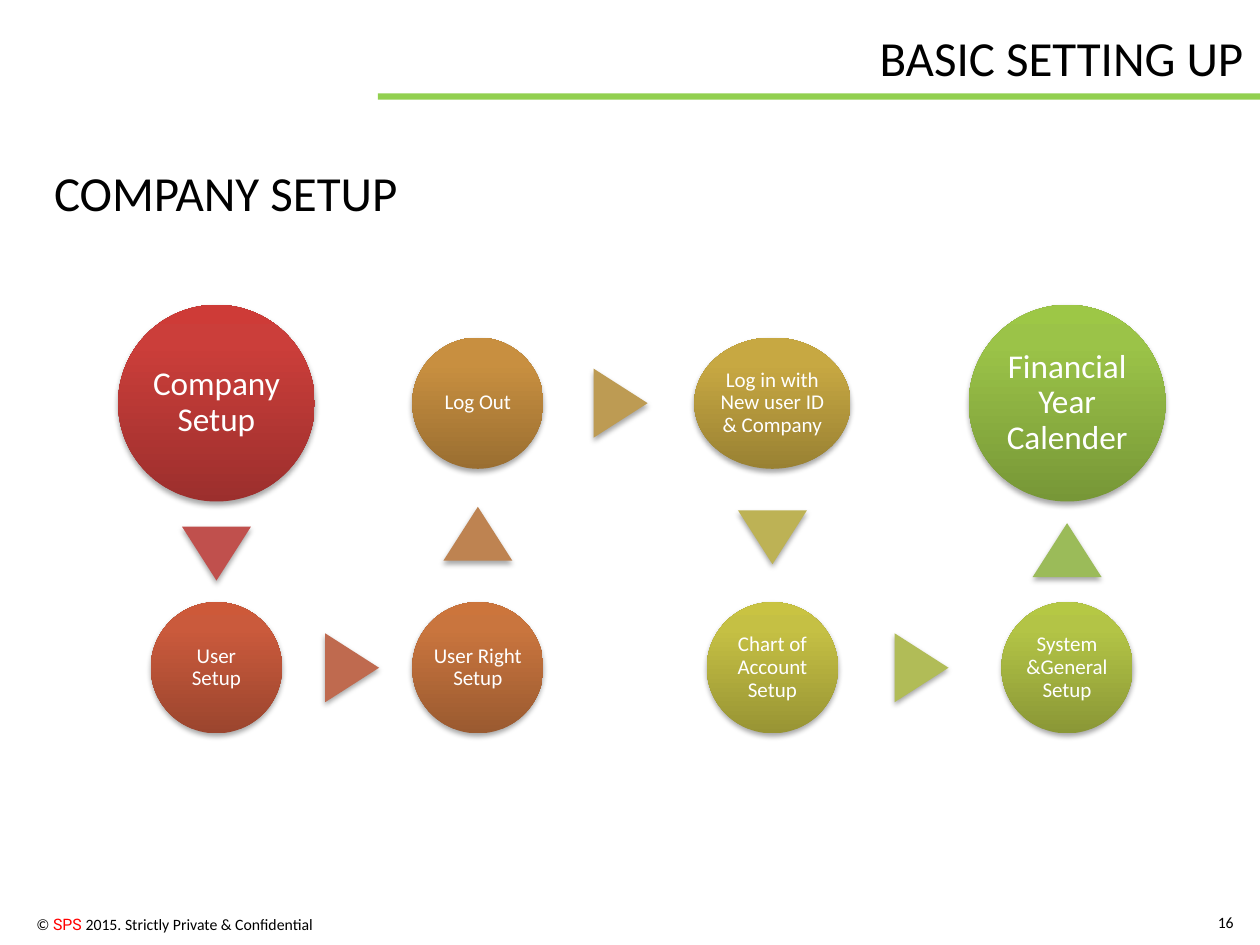
import copy

import pptx
import pptx.dml.color
import pptx.enum.shapes
import pptx.enum.text
import pptx.oxml
import pptx.oxml.ns
import pptx.util

Pt = pptx.util.Pt
SHAPE = pptx.enum.shapes.MSO_SHAPE
ALIGN = pptx.enum.text.PP_ALIGN
ANCHOR = pptx.enum.text.MSO_ANCHOR

THEME = {
    "font": "Calibri", "brand_font": "Roboto",
    "text": "000000", "brand": "FF0000", "on_fill": "FFFFFF", "rule": "92D050",
    "heading": 28, "large": 19, "small": 12, "footer": 9,
}

TITLE = "BASIC SETTING UP"
SUBTITLE = "COMPANY SETUP"
FOOTER = [("© ", "font", "text"), ("SPS ", "brand_font", "brand"),
          ("2015. Strictly Private & Confidential", "font", "text")]
PAGE_NUMBER = "16"

COLUMNS = [123.7, 273.1, 441.4, 609.8]
ROWS = [230.4, 381.6]
LARGE, SMALL, WIDE = (112.4, 112.4), (75, 75), (89.3, 75)
STOPS = [0, 0.8, 1]

# text, column, row, size, text size, gradient from bottom to top
STEPS = [
    ("Company Setup", 0, 0, LARGE, "large", ("9C2F2D", "CB3E3A", "CE3B37")),
    ("User Setup", 0, 1, SMALL, "small", ("9B452E", "CA5A3C", "CD5939")),
    ("User Right Setup", 1, 1, SMALL, "small", ("9A5A30", "C9753E", "CC753C")),
    ("Log Out", 1, 0, SMALL, "small", ("9A6E31", "C88F40", "CB903E")),
    ("Log in with New user ID & Company", 2, 0, WIDE, "small", ("998133", "C7A842", "CAAA40")),
    ("Chart of Account Setup", 2, 1, SMALL, "small", ("989434", "C5C044", "C9C342")),
    ("System &General Setup", 3, 1, SMALL, "small", ("8A9736", "B3C446", "B5C844")),
    ("Financial Year Calender", 3, 0, LARGE, "large", ("779737", "9BC348", "9DC746")),
]
# colour and forward shift of the arrow after each step
ARROWS = [("C0504D", 1), ("BF6A4F", 2.8), ("BE8351", 1), ("BD9B53", 1),
          ("BDB255", 1), ("B1BC57", 1), ("9BBB59", 1)]
ARROW_WIDTH, ARROW_HEIGHT = 39.4, 30.8


def rgb(value):
    return pptx.dml.color.RGBColor.from_string(value)


def add_span(para, text, size, font="font", colour="text"):
    span = para.add_run()
    span.text = text
    span.font.size = Pt(THEME[size])
    span.font.name = THEME[font]
    span.font.color.rgb = rgb(THEME[colour])


def set_frame(frame, inset, wrap, anchor):
    frame.word_wrap = wrap
    frame.vertical_anchor = anchor
    frame.margin_left = frame.margin_right = Pt(inset[0])
    frame.margin_top = frame.margin_bottom = Pt(inset[1])
    return frame.paragraphs[0]


def place(shape, left, top, width, height):
    shape.left, shape.top = Pt(left), Pt(top)
    shape.width, shape.height = Pt(width), Pt(height)


def add_text(page, area, wrap=False, anchor=ANCHOR.TOP, align=ALIGN.LEFT):
    box = page.shapes.add_textbox(*map(Pt, area))
    para = set_frame(box.text_frame, (7.2, 3.6), wrap, anchor)
    para.alignment = align
    return para


def add_centred(page, kind, x, y, width, height):
    """Add a borderless shape with a soft shadow around the point x, y."""
    shape = page.shapes.add_shape(
        kind, Pt(x - width / 2), Pt(y - height / 2), Pt(width), Pt(height))
    shape.line.fill.background()
    shape.shadow.inherit = False
    effects = shape.element.spPr.find(pptx.oxml.ns.qn("a:effectLst"))
    effects.append(pptx.oxml.parse_xml(
        f'<a:outerShdw {pptx.oxml.ns.nsdecls("a")} blurRad="{Pt(3.1)}" dist="{Pt(1.8)}" '
        'dir="5400000" rotWithShape="0"><a:srgbClr val="000000">'
        '<a:alpha val="35000"/></a:srgbClr></a:outerShdw>'))
    return shape


def fill_gradient(shape, colours):
    shape.fill.gradient()
    shape.fill.gradient_angle = 90
    stop_list = shape.element.spPr.find(".//" + pptx.oxml.ns.qn("a:gsLst"))
    stop_list.append(copy.deepcopy(stop_list[0]))
    for stop, position, colour in zip(shape.fill.gradient_stops, STOPS, colours):
        stop.position = position
        stop.color.rgb = rgb(colour)


def add_step(page, text, column, row, size, text_size, colours):
    circle = add_centred(page, SHAPE.OVAL, COLUMNS[column], ROWS[row], *size)
    fill_gradient(circle, colours)
    inset = THEME[text_size] / 9
    para = set_frame(circle.text_frame, (inset, inset), True, ANCHOR.MIDDLE)
    para.alignment = ALIGN.CENTER
    para.line_spacing = 0.9
    add_span(para, text, text_size, colour="on_fill")


def add_arrow(page, start, end, colour, shift):
    """Put a triangle in the middle of the gap, pointing at the next step."""
    _, column, row, size, *_ = start
    _, next_column, next_row, next_size, *_ = end
    x, y = COLUMNS[column], ROWS[row]
    if column != next_column:
        x = (x + size[0] / 2 + COLUMNS[next_column] - next_size[0] / 2) / 2 + shift
        rotation = 90
    else:
        way = 1 if next_row > row else -1
        y = (y + ROWS[next_row] + way * (size[1] - next_size[1]) / 2) / 2 + way * shift
        rotation = 180 if way > 0 else 0
    arrow = add_centred(page, SHAPE.ISOSCELES_TRIANGLE, x, y, ARROW_WIDTH, ARROW_HEIGHT)
    arrow.rotation = rotation
    arrow.fill.solid()
    arrow.fill.fore_color.rgb = rgb(colour)


def main():
    deck = pptx.Presentation()
    deck.slide_width, deck.slide_height = Pt(720), Pt(540)
    page = deck.slides.add_slide(deck.slide_layouts[5])

    rule = page.shapes.add_shape(SHAPE.RECTANGLE, Pt(216), Pt(53.4), Pt(504), Pt(3.6))
    rule.shadow.inherit = False
    rule.fill.solid()
    rule.fill.fore_color.rgb = rgb(THEME["rule"])
    rule.line.fill.background()

    title = page.shapes.title
    place(title, 495.4, 12.2, 224.6, 41)
    para = set_frame(title.text_frame, (7.2, 3.6), False, ANCHOR.TOP)
    para.alignment = ALIGN.LEFT
    add_span(para, TITLE, "heading")
    add_span(add_text(page, (23.8, 89.3, 213, 41)), SUBTITLE, "heading")

    for step in STEPS:
        add_step(page, *step)
    for start, end, arrow in zip(STEPS, STEPS[1:], ARROWS):
        add_arrow(page, start, end, *arrow)

    para = add_text(page, (-23.8, 519.1, 209.5, 18), wrap=True, align=ALIGN.RIGHT)
    for text, font, colour in FOOTER:
        add_span(para, text, "footer", font, colour)
    para = add_text(page, (683.3, 512.6, 28.8, 28.8), True, ANCHOR.MIDDLE, ALIGN.RIGHT)
    add_span(para, PAGE_NUMBER, "footer")

    deck.save("out.pptx")


if __name__ == "__main__":
    main()
